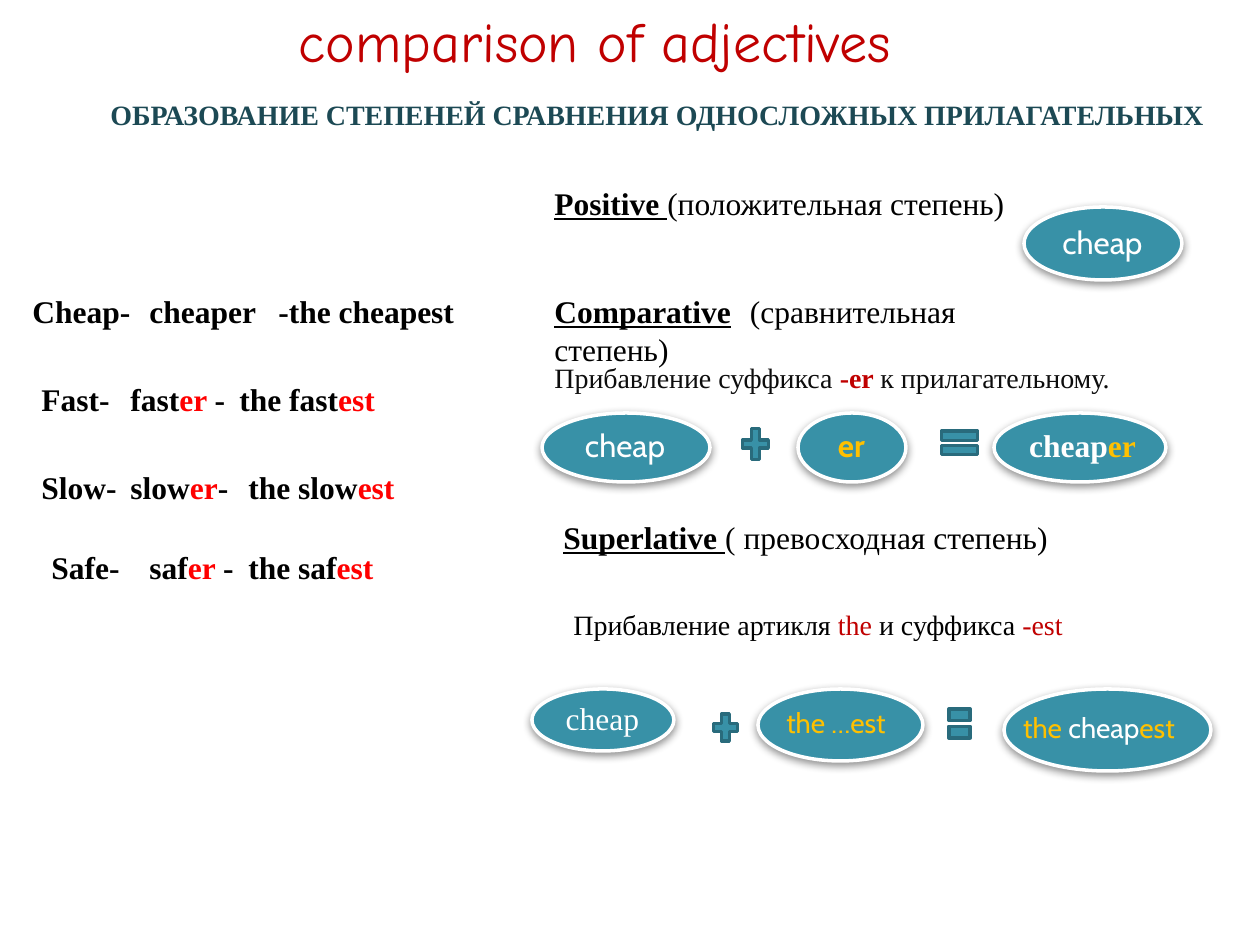
import pptx
import pptx.util
import pptx.dml.color
import pptx.enum.shapes
import pptx.enum.text
import pptx.oxml

PX = 914400 // 126
COLORS = {"black": "000000", "dark": "0D0D0D", "white": "FFFFFF", "crimson": "C00000",
          "red": "FF0000", "gold": "FFC000", "navy": "1C4954", "teal": "3891A7",
          "edge": "296B7C"}
SERIF, ROUND = "Times New Roman", "Cabin"
SHADOW = """<a:effectLst xmlns:a="http://schemas.openxmlformats.org/drawingml/2006/main">
<a:outerShdw blurRad="63500" dist="25400" dir="5400000" rotWithShape="0">
<a:srgbClr val="000000"><a:alpha val="43000"/></a:srgbClr></a:outerShdw></a:effectLst>"""
ANCHOR = pptx.enum.text.MSO_ANCHOR
ALIGN = pptx.enum.text.PP_ALIGN
SHAPE = pptx.enum.shapes.MSO_SHAPE


def rgb(name):
    return pptx.dml.color.RGBColor.from_string(COLORS[name])


def write(tf, runs, size=18, wrap=False, **base):
    """Fill a text frame with (text, colour, overrides) runs."""
    tf.word_wrap = wrap
    p = tf.paragraphs[0]
    for text, color, *extra in runs:
        r = p.add_run()
        r.text = text
        fmt = {"name": SERIF, "size": pptx.util.Pt(size), "bold": False, **base}
        for over in extra:
            fmt.update(over)
        for key, value in fmt.items():
            setattr(r.font, key, value)
        r.font.color.rgb = rgb(color)
    return p


prs = pptx.Presentation()
prs.slide_width, prs.slide_height = pptx.util.Inches(10), pptx.util.Inches(7.5)
s = prs.slides.add_slide(prs.slide_layouts[5])

title = s.shapes.title
title.left, title.top, title.width, title.height = [v * PX for v in (286, 0, 684, 81)]
title.text_frame.vertical_anchor = ANCHOR.TOP
p = write(title.text_frame, [("comparison of adjectives", "crimson")], 32, name="Comic Neue")
p.alignment = ALIGN.LEFT

box = s.shapes.add_textbox(*[v * PX for v in (98, 98, 1132, 39)])
box.text_frame.vertical_anchor = ANCHOR.BOTTOM
p = write(box.text_frame,
          [("ОБРАЗОВАНИЕ СТЕПЕНЕЙ СРАВНЕНИЯ ОДНОСЛОЖНЫХ ПРИЛАГАТЕЛЬНЫХ", "navy")],
          16, wrap=True, bold=True)
p.line_spacing = pptx.util.Pt(20)

# Ovals: oval frame, label frame, size, font, bold, runs
ovals = [
    ((1024, 207, 158, 73), (1047, 218, 111, 52), 18, ROUND, False, [("cheap", "white")]),
    ((542, 413, 168, 69), (566, 423, 118, 49), 18, ROUND, False, [("cheap", "white")]),
    ((798, 413, 108, 69), (813, 423, 77, 49), 18, ROUND, True, [("er", "gold")]),
    ((994, 413, 172, 69), (1014, 423, 137, 49), 18, SERIF, True,
     [("cheap", "white"), ("er", "gold")]),
    ((532, 689, 142, 62), (552, 698, 101, 44), 18, SERIF, False, [("cheap", "white")]),
    ((758, 689, 165, 72), (758, 699, 156, 50), 16, ROUND, False, [("the …est", "gold")]),
    ((1004, 689, 207, 82), (994, 700, 210, 58), 16, ROUND, False,
     [("the ", "gold"), ("cheap", "white"), ("est", "gold")]),
]
for frame, label, size, font, bold, runs in ovals:
    group = s.shapes.add_group_shape()
    sp = group.shapes.add_shape(SHAPE.OVAL, *[v * PX for v in frame])
    sp.fill.solid()
    sp.fill.fore_color.rgb = rgb("teal")
    sp.line.color.rgb = rgb("white")
    sp.line.width = pptx.util.Pt(2)
    sp._element.spPr.append(pptx.oxml.parse_xml(SHADOW))
    tf = group.shapes.add_textbox(*[v * PX for v in label]).text_frame
    tf.vertical_anchor = ANCHOR.MIDDLE
    for side in ("left", "top", "right", "bottom"):
        setattr(tf, f"margin_{side}", 4 * PX)
    p = write(tf, runs, size, wrap=True, name=font, bold=bold)
    p.alignment = ALIGN.CENTER
    p.line_spacing = 0.9

signs = [
    (SHAPE.MATH_PLUS, (738, 423, 35, 42)),
    (SHAPE.MATH_EQUAL, (935, 423, 49, 40)),
    (SHAPE.MATH_PLUS, (709, 709, 33, 37)),
    (SHAPE.MATH_EQUAL, (945, 699, 29, 49)),
]
for kind, frame in signs:
    sp = s.shapes.add_shape(kind, *[v * PX for v in frame])
    sp.shadow.inherit = False
    sp.fill.solid()
    sp.fill.fore_color.rgb = rgb("teal")
    sp.line.color.rgb = rgb("edge")
    sp.line.width = pptx.util.Pt(2)

rules = [
    ((542, 354, 588, 47), [("Прибавление суффикса ", "dark"), ("-er ", "crimson", {"bold": True}),
                           ("к прилагательному.", "dark")]),
    ((561, 601, 522, 47), [("Прибавление артикля ", "black"), ("the", "crimson"),
                           (" и суффикса ", "black"), ("-est", "crimson")]),
]
for frame, runs in rules:
    box = s.shapes.add_textbox(*[v * PX for v in frame])
    write(box.text_frame, runs, 16)

# Example rows: top, then (left, width, stem, ending, tail) for each degree
examples = [
    (286, [(20, 125, "Cheap-", "", ""), (137, 134, "cheaper", "", ""),
           (266, 203, "-the cheapest", "", "")]),
    (374, [(29, 94, "Fast-", "", ""), (118, 121, "fast", "er ", "-"),
           (227, 162, "the fast", "est", "")]),
    (462, [(29, 102, "Slow-", "", ""), (118, 123, "slow", "er", "-"),
           (236, 173, "the slow", "est", "")]),
    (542, [(39, 94, "Safe-", "", ""), (137, 111, "saf", "er ", "-"),
           (236, 151, "the saf", "est", "")]),
]
for top, words in examples:
    for left, width, *parts in words:
        box = s.shapes.add_textbox(*[v * PX for v in (left, top, width, 50)])
        runs = [run for run in zip(parts, ("black", "red", "black")) if run[0]]
        write(box.text_frame, runs, bold=True)

TERM = {"bold": True, "underline": True}
degrees = [
    ((542, 178, 496, 89), [("Positive ", "black", TERM), ("(положительная степень)", "black")]),
    ((542, 286, 544, 89), [("Comparative", "black", TERM),
                           (" ", "black", {"name": "Noto Sans Mono"}),
                           ("(сравнительная степень)", "black")]),
    ((551, 512, 515, 89), [("Superlative ", "black", TERM),
                           ("( превосходная степень)", "black")]),
]
for frame, runs in degrees:
    box = s.shapes.add_textbox(*[v * PX for v in frame])
    write(box.text_frame, runs, wrap=True)

prs.save("out.pptx")
